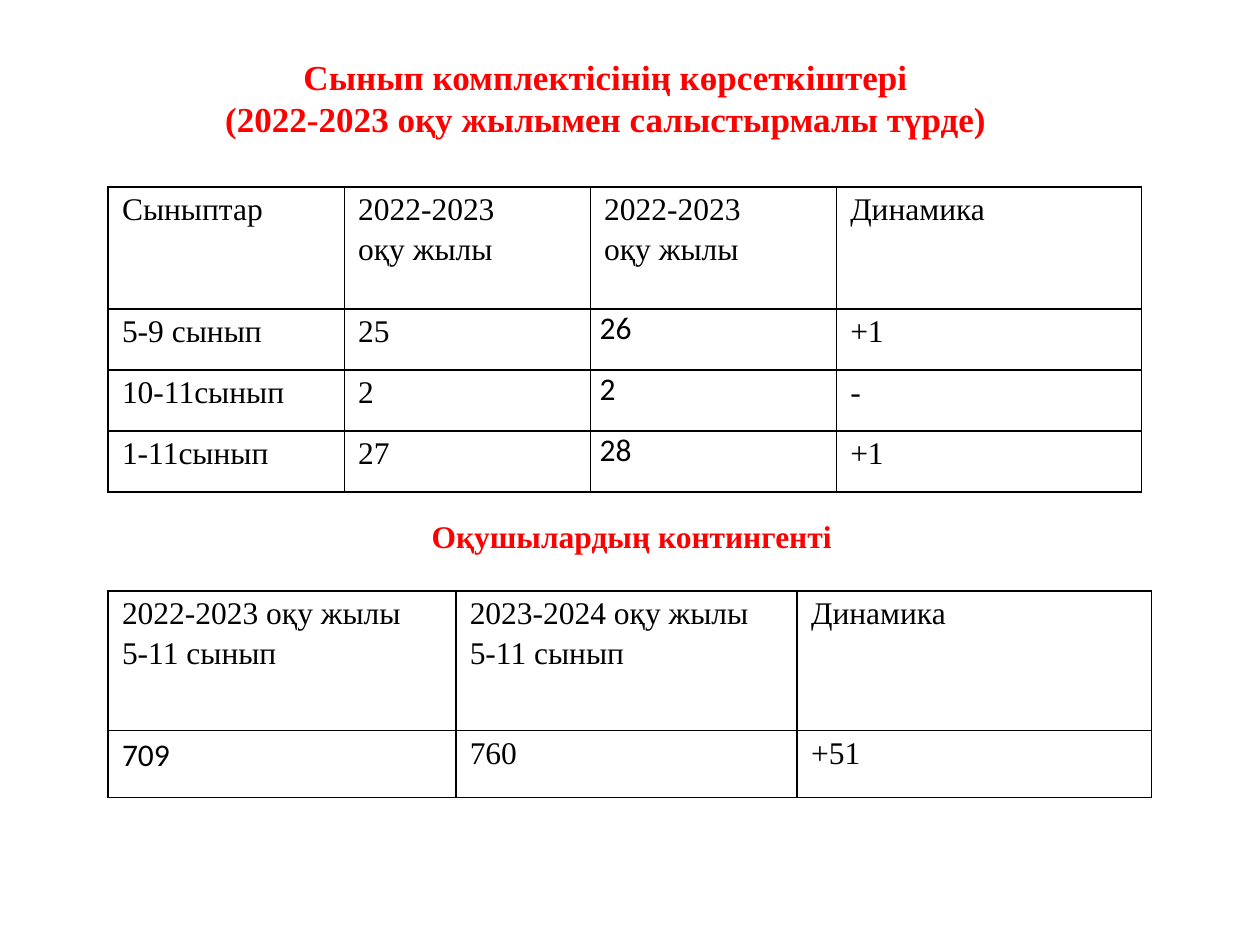
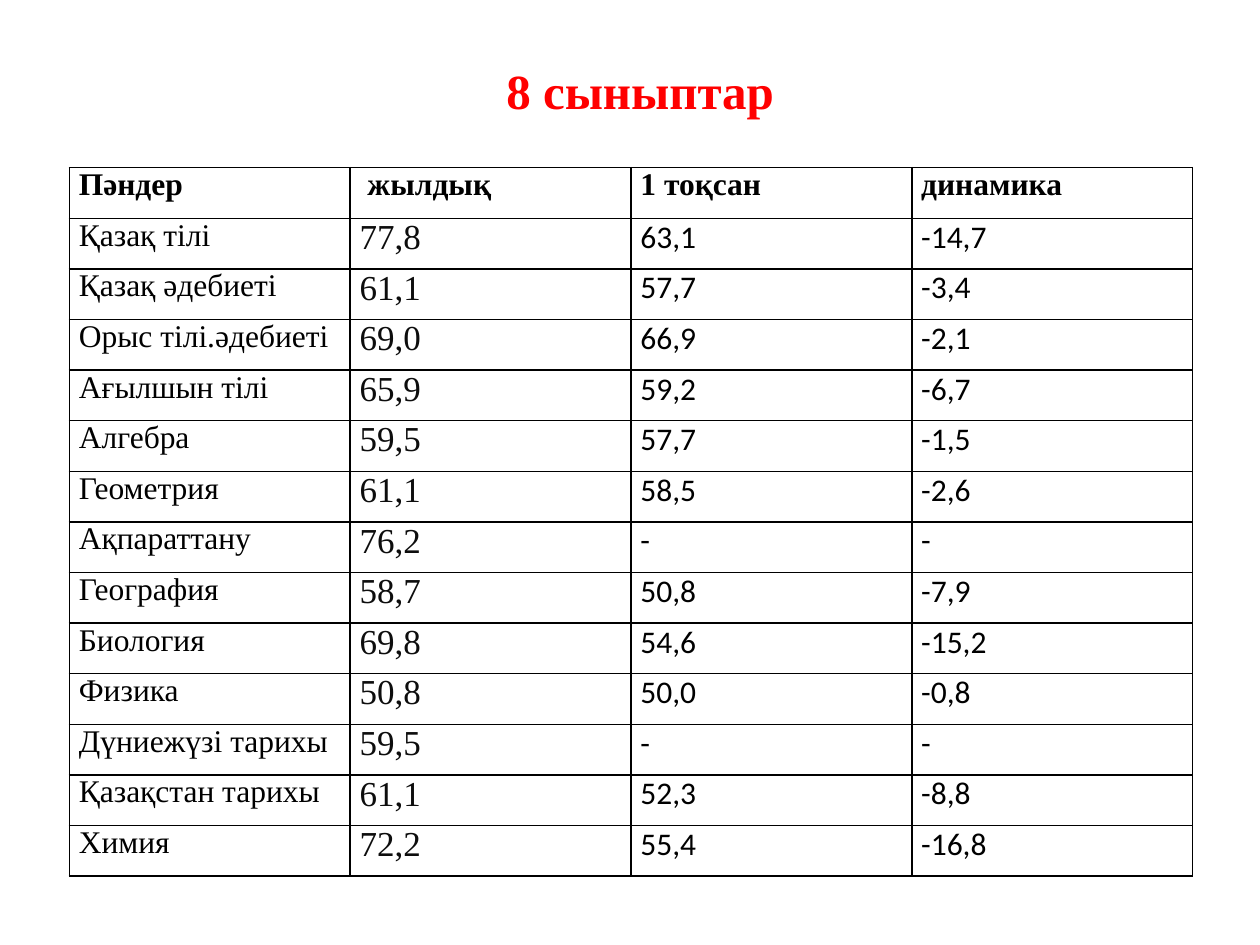
import pptx
import pptx.util
import pptx.dml.color
import pptx.enum.text
import pptx.enum.shapes
import pptx.oxml.ns
import lxml.etree

Cm, Pt = pptx.util.Cm, pptx.util.Pt
RGB = pptx.dml.color.RGBColor
ALIGN = pptx.enum.text.PP_ALIGN

BLACK = RGB(0, 0, 0)
NEAR_BLACK = RGB(0x0D, 0x0D, 0x0D)
RED = RGB(0xFF, 0, 0)
WHITE = RGB(0xFF, 0xFF, 0xFF)
SERIF, SANS = "Times New Roman", "Calibri"


def style(name=SERIF, size=18, bold=False, color=BLACK,
          align=ALIGN.JUSTIFY, spacing=1.0, indent=0):
    return {
        "font": {"name": name, "size": Pt(size), "bold": bold},
        "color": color,
        "para": {"alignment": align, "line_spacing": spacing},
        "indent": Cm(indent),
    }


WIDE = style(spacing=1.15, indent=0.09)
WIDE_SANS = style(SANS, spacing=1.15, indent=0.09)
SERIF_CELL = style()
HEAD_CELL = style(bold=True)
YEAR_CELL = style(size=20, color=NEAR_BLACK)
SANS_CELL = style(SANS, align=ALIGN.LEFT)


def heading(size):
    return style(size=size, bold=True, color=RED, align=ALIGN.CENTER)


CLASS_SETS = {
    "left": 2.18, "top": 3.77,
    "widths": [4.76, 4.96, 4.96, 6.15],
    "heights": [2.46] + [1.23] * 3,
    "head": [WIDE] * 4,
    "body": [WIDE, WIDE, SANS_CELL, WIDE],
    "rows": [
        ("Сыныптар", "2022-2023\nоқу жылы", "2022-2023\nоқу жылы", "Динамика"),
        ("5-9 сынып", "25", "26", "+1"),
        ("10-11сынып", "2", "2", "-"),
        ("1-11сынып", "27", "28", "+1"),
    ],
}
PUPILS = {
    "left": 2.18, "top": 11.91,
    "widths": [7.01, 6.88, 7.14],
    "heights": [2.82, 1.35],
    "head": [WIDE] * 3,
    "body": [WIDE_SANS, WIDE, WIDE],
    "rows": [
        ("2022-2023 оқу жылы\n5-11 сынып", "2023-2024 оқу жылы\n5-11 сынып", "Динамика"),
        ("709", "760", "+51"),
    ],
}
SUBJECTS = {
    "left": 1.4, "top": 3.38,
    "widths": [5.66] * 4,
    "heights": [1.02] * 14,
    "head": [HEAD_CELL] * 4,
    "body": [SERIF_CELL, YEAR_CELL, SANS_CELL, SANS_CELL],
    "rows": [
        ("Пәндер", " жылдық", "1 тоқсан", "динамика"),
        ("Қазақ тілі", "77,8", "63,1", "-14,7"),
        ("Қазақ әдебиеті", "61,1", "57,7", "-3,4"),
        ("Орыс тілі.әдебиеті", "69,0", "66,9", "-2,1"),
        ("Ағылшын тілі", "65,9", "59,2", "-6,7"),
        ("Алгебра", "59,5", "57,7", "-1,5"),
        ("Геометрия", "61,1", "58,5", "-2,6"),
        ("Ақпараттану", "76,2", "-", "-"),
        ("География", "58,7", "50,8", "-7,9"),
        ("Биология", "69,8", "54,6", "-15,2"),
        ("Физика", "50,8", "50,0", "-0,8"),
        ("Дүниежүзі тарихы", "59,5", "-", "-"),
        ("Қазақстан тарихы", "61,1", "52,3", "-8,8"),
        ("Химия", "72,2", "55,4", "-16,8"),
    ],
}
CLASS_TITLE = " Сынып комплектісінің көрсеткіштері \n(2022-2023 оқу жылымен салыстырмалы түрде)"
PUPILS_TITLE = "Оқушылардың контингенті "
SUBJECTS_TITLE = "8 сыныптар"


def set_all(obj, values):
    for key, value in values.items():
        setattr(obj, key, value)


def write(tf, text, fmt):
    for i, line in enumerate(text.split("\n")):
        p = tf.add_paragraph() if i else tf.paragraphs[0]
        set_all(p, fmt["para"])
        if fmt["indent"]:
            pPr = p._p.get_or_add_pPr()
            pPr.set("marL", str(int(fmt["indent"])))
            pPr.set("indent", "0")
        r = p.add_run()
        r.text = line
        set_all(r.font, fmt["font"])
        r.font.color.rgb = fmt["color"]


def add_borders(cell):
    qn = pptx.oxml.ns.qn
    tcPr = cell._tc.get_or_add_tcPr()
    for i, side in enumerate(("lnL", "lnR", "lnT", "lnB")):
        ln = lxml.etree.Element(qn("a:" + side), w=str(int(Pt(1))))
        fill = lxml.etree.SubElement(ln, qn("a:solidFill"))
        lxml.etree.SubElement(fill, qn("a:srgbClr"), val=str(BLACK))
        tcPr.insert(i, ln)


def add_table(s, spec):
    rows, widths, heights = spec["rows"], spec["widths"], spec["heights"]
    tbl = s.shapes.add_table(len(rows), len(widths), Cm(spec["left"]), Cm(spec["top"]),
                             Cm(sum(widths)), Cm(sum(heights))).table
    set_all(tbl, {"first_row": False, "horz_banding": False})
    for col, width in zip(tbl.columns, widths):
        col.width = Cm(width)
    for i, (row, height) in enumerate(zip(tbl.rows, heights)):
        row.height = Cm(height)
        styles = spec["body"] if i else spec["head"]
        for cell, text, fmt in zip(row.cells, rows[i], styles):
            set_all(cell, {"margin_left": Cm(0.19), "margin_right": Cm(0.19),
                           "margin_top": 0, "margin_bottom": 0})
            cell.fill.background()
            write(cell.text_frame, text, fmt)
            add_borders(cell)


def add_heading(s, text, size, left, top, width, height):
    sp = s.shapes.add_textbox(Cm(left), Cm(top), Cm(width), Cm(height))
    sp.text_frame.word_wrap = True
    write(sp.text_frame, text, heading(size))


def add_banner(s, text, left, top, width, height):
    sp = s.shapes.add_shape(pptx.enum.shapes.MSO_SHAPE.RECTANGLE,
                            Cm(left), Cm(top), Cm(width), Cm(height))
    sp.shadow.inherit = False
    sp.fill.solid()
    sp.fill.fore_color.rgb = WHITE
    sp.line.fill.background()
    set_all(sp.text_frame, {"word_wrap": True, "margin_top": Cm(0.5),
                            "vertical_anchor": pptx.enum.text.MSO_ANCHOR.MIDDLE})
    write(sp.text_frame, text, heading(28))


def main():
    prs = pptx.Presentation()
    prs.slide_width, prs.slide_height = Cm(25.4), Cm(19.05)
    blank = prs.slide_layouts[6]

    s = prs.slides.add_slide(blank)
    add_table(s, CLASS_SETS)
    add_heading(s, CLASS_TITLE, 20, 3.18, 0.99, 18.06, 1.96)
    add_heading(s, PUPILS_TITLE, 18, 2.59, 10.29, 20.45, 1.02)
    add_table(s, PUPILS)

    s = prs.slides.add_slide(blank)
    add_table(s, SUBJECTS)
    add_banner(s, SUBJECTS_TITLE, 3.38, 0, 19.05, 3.25)

    prs.save("out.pptx")


if __name__ == "__main__":
    main()
